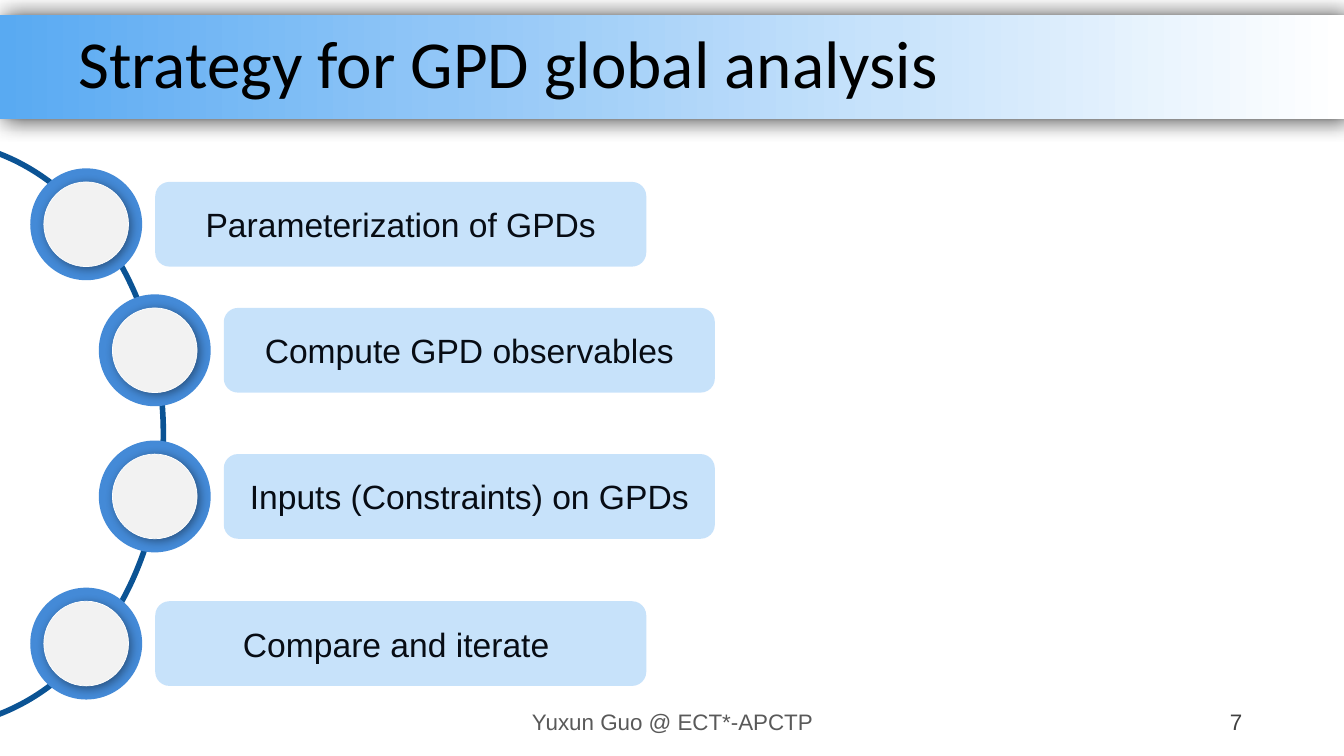
from dataclasses import dataclass
from typing import Optional

from lxml.etree import SubElement
from pptx import Presentation
from pptx.dml.color import RGBColor
from pptx.enum.shapes import MSO_SHAPE
from pptx.enum.text import MSO_ANCHOR, PP_ALIGN
from pptx.oxml.ns import qn
from pptx.shapes.autoshape import Shape
from pptx.slide import Slide
from pptx.util import Inches, Pt


@dataclass(frozen=True)
class Theme:
    band: tuple = ((0, "59AAF2"), (33, "91C6F7"), (66, "C8E3FB"), (100, "FFFFFF"))
    arc: str = "0B5394"
    ring: str = "448AD7"
    disc: str = "F2F2F2"
    rim: str = "FFFFFF"
    label: str = "91C6F7"
    ink: str = "070C14"
    title: str = "000000"
    footer: str = "595959"
    number: str = "404040"
    head_font: str = "Calibri"
    body_font: str = "Arial"
    title_size: int = 48
    label_size: int = 24
    foot_size: int = 16


@dataclass(frozen=True)
class Box:
    left: float
    top: float
    width: float
    height: float


@dataclass(frozen=True)
class Shade:
    """Outer shadow: opacity in percent, blur and distance in points, angle in degrees."""
    opacity: int
    blur: int
    dist: int
    angle: int


@dataclass(frozen=True)
class Step:
    text: str
    left: float
    top: float


THEME = Theme()
RING, DISC, LABEL = 1.11, 0.84, 4.87
INSET = (RING - DISC) / 2
GAP = 0.13
OUTER, INNER = 0.3, 0.98
STEPS = (
    Step("Parameterization of GPDs", OUTER, 1.67),
    Step("Compute GPD observables", INNER, 2.92),
    Step("Inputs (Constraints) on GPDs", INNER, 4.37),
    Step("Compare and iterate ", OUTER, 5.83),
)


def place(box: Box) -> tuple:
    return tuple(Inches(n) for n in (box.left, box.top, box.width, box.height))


def add_shape(slide: Slide, kind: MSO_SHAPE, box: Box, fill: Optional[str] = None,
              line: Optional[str] = None, weight: float = 0) -> Shape:
    shape = slide.shapes.add_shape(kind, *place(box))
    shape.shadow.inherit = False
    if fill:
        shape.fill.solid()
        shape.fill.fore_color.rgb = RGBColor.from_string(fill)
    else:
        shape.fill.background()
    if line:
        shape.line.color.rgb = RGBColor.from_string(line)
        shape.line.width = Pt(weight)
    else:
        shape.line.fill.background()
    return shape


def set_alpha(color, percent: int) -> None:
    SubElement(color, qn("a:alpha"), val=str(percent * 1000))


def cast(shape: Shape, shade: Shade) -> None:
    effects = shape.element.spPr.find(qn("a:effectLst"))
    outer = SubElement(effects, qn("a:outerShdw"), blurRad=str(Pt(shade.blur)),
                       dist=str(Pt(shade.dist)), dir=str(shade.angle * 60000),
                       algn="ctr", rotWithShape="0")
    set_alpha(SubElement(outer, qn("a:srgbClr"), val="000000"), shade.opacity)


def blend(shape: Shape, stops: tuple) -> None:
    """Fill the shape with a left-to-right gradient."""
    shape.fill.gradient()
    shape.fill.gradient_angle = 0
    holder = shape.element.spPr.find(".//" + qn("a:gsLst"))
    for old in list(holder):
        holder.remove(old)
    for spot, color in stops:
        stop = SubElement(holder, qn("a:gs"), pos=str(spot * 1000))
        SubElement(stop, qn("a:srgbClr"), val=color)


def write(shape: Shape, text: str, size: int, color: str,
          align: PP_ALIGN = PP_ALIGN.CENTER, font: str = THEME.body_font) -> None:
    frame = shape.text_frame
    frame.text = text
    frame.word_wrap = True
    frame.vertical_anchor = MSO_ANCHOR.MIDDLE
    line = frame.paragraphs[0]
    line.alignment = align
    style = line.runs[0].font
    style.name, style.size = font, Pt(size)
    style.color.rgb = RGBColor.from_string(color)


def draw_frame(slide: Slide) -> None:
    """Draw the title band, the footer and the page number."""
    band = add_shape(slide, MSO_SHAPE.RECTANGLE, Box(0, 0.15, 13.33, 1.03))
    blend(band, THEME.band)
    cast(band, Shade(76, 16, 3, 0))
    number = slide.shapes.add_textbox(*place(Box(9.42, 6.96, 3, 0.4)))
    write(number, "7", THEME.foot_size, THEME.number, PP_ALIGN.RIGHT)
    footer = slide.shapes.add_textbox(*place(Box(4.61, 6.96, 4.12, 0.4)))
    write(footer, "Yuxun Guo @ ECT*-APCTP", THEME.foot_size, THEME.footer)
    title = slide.shapes.add_textbox(*place(Box(0.68, 0.15, 11.5, 1.03)))
    write(title, "Strategy for GPD global analysis", THEME.title_size,
          THEME.title, PP_ALIGN.LEFT, THEME.head_font)
    title.text_frame.paragraphs[0].line_spacing = 0.9


def draw_step(slide: Slide, step: Step) -> None:
    add_shape(slide, MSO_SHAPE.OVAL, Box(step.left, step.top, RING, RING), THEME.ring)
    top = step.top + INSET
    disc = add_shape(slide, MSO_SHAPE.OVAL, Box(step.left + INSET, top, DISC, DISC),
                     THEME.disc, THEME.rim, 0.5)
    cast(disc, Shade(40, 7, 2, 45))
    label = add_shape(slide, MSO_SHAPE.ROUNDED_RECTANGLE,
                      Box(step.left + RING + GAP, top, LABEL, DISC), THEME.label)
    set_alpha(label.element.spPr.find(qn("a:solidFill"))[0], 50)
    write(label, step.text, THEME.label_size, THEME.ink)


def main() -> None:
    deck = Presentation()
    deck.slide_width, deck.slide_height = Inches(13.33), Inches(7.5)
    slide = deck.slides.add_slide(deck.slide_layouts[6])
    draw_frame(slide)
    add_shape(slide, MSO_SHAPE.OVAL, Box(-2.97, 1.4, 4.59, 5.81), line=THEME.arc, weight=4)
    for step in STEPS:
        draw_step(slide, step)
    deck.save("out.pptx")


if __name__ == "__main__":
    main()
